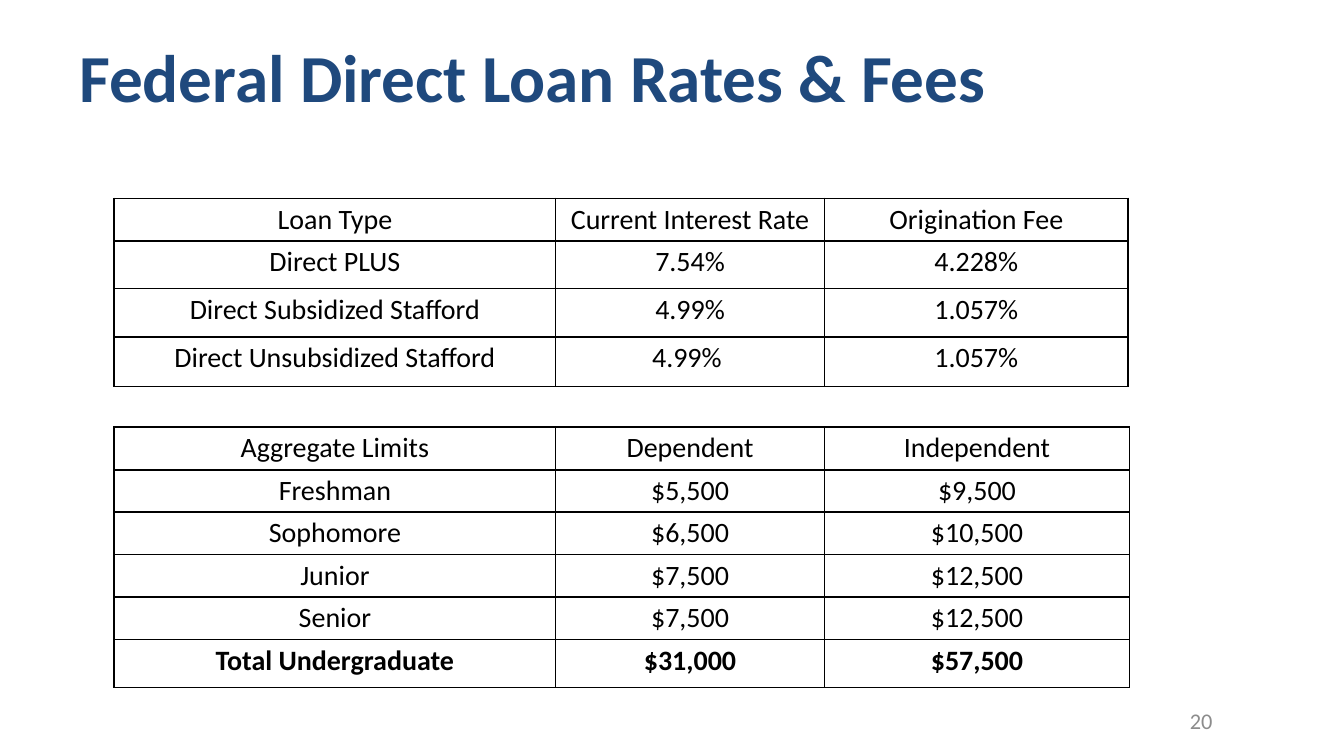
import pptx
import pptx.util
import pptx.dml.color
import pptx.enum.text
import pptx.oxml.ns
import lxml.etree

BLACK = pptx.dml.color.RGBColor(0x00, 0x00, 0x00)
NAVY = pptx.dml.color.RGBColor(0x1F, 0x49, 0x7D)
GRAY = pptx.dml.color.RGBColor(0x8C, 0x8C, 0x8C)
FONT = "Calibri"
WIDTH = pptx.util.Inches(10)
HEIGHT = WIDTH * 9 // 16
ALIGN = pptx.enum.text.PP_ALIGN
MIDDLE = pptx.enum.text.MSO_ANCHOR.MIDDLE

LEFT = 8.5
RATES = [
    ["Loan Type", "Current Interest Rate", "Origination Fee"],
    ["Direct PLUS", "7.54%", "4.228%"],
    ["Direct Subsidized Stafford", "4.99%", "1.057%"],
    ["Direct Unsubsidized Stafford", "4.99% ", "1.057%"],
]
LIMITS = [
    ["Aggregate Limits", "Dependent", "Independent"],
    ["Freshman", "$5,500", "$9,500"],
    ["Sophomore", "$6,500", "$10,500"],
    ["Junior", "$7,500", "$12,500"],
    ["Senior", "$7,500", "$12,500"],
    ["Total Undergraduate", "$31,000", "$57,500"],
]


def across(share):
    return int(WIDTH * share / 100)


def down(share):
    return int(HEIGHT * share / 100)


def write(frame, text, size, color, align, bold=False):
    frame.text = text
    line = frame.paragraphs[0]
    line.alignment = align
    for run in line.runs:
        font = run.font
        font.name = FONT
        font.size = pptx.util.Pt(size)
        font.bold = bold
        font.color.rgb = color


def border(cell):
    qn = pptx.oxml.ns.qn
    props = cell._tc.get_or_add_tcPr()
    for side in ("lnL", "lnR", "lnT", "lnB"):
        edge = lxml.etree.SubElement(props, qn("a:" + side), w=str(pptx.util.Pt(1)))
        fill = lxml.etree.SubElement(edge, qn("a:solidFill"))
        lxml.etree.SubElement(fill, qn("a:srgbClr"), val=str(BLACK))


def add_grid(slide, rows, top, cols, heights, total=False):
    frame = slide.shapes.add_table(
        len(rows), len(cols), across(LEFT), down(top),
        across(sum(cols)), down(sum(heights)))
    table = frame.table
    table.first_row = False
    table.horz_banding = False
    for col, share in zip(table.columns, cols):
        col.width = across(share)
    for row, share in zip(table.rows, heights):
        row.height = down(share)
    for r, texts in enumerate(rows):
        bold = total and r == len(rows) - 1
        for c, text in enumerate(texts):
            cell = table.cell(r, c)
            cell.margin_left = cell.margin_right = pptx.util.Inches(0.06)
            cell.margin_top = cell.margin_bottom = pptx.util.Inches(0.03)
            border(cell)
            cell.fill.background()
            write(cell.text_frame, text, 15, BLACK, ALIGN.CENTER, bold)


def add_title(slide, text):
    title = slide.shapes.title
    title.left, title.top = across(4.9), down(2.5)
    title.width, title.height = across(90.2), down(15)
    frame = title.text_frame
    frame.auto_size = pptx.enum.text.MSO_AUTO_SIZE.NONE
    frame.vertical_anchor = MIDDLE
    write(frame, text, 36, NAVY, ALIGN.LEFT, True)


def add_number(slide, text):
    box = slide.shapes.add_textbox(across(71.7), down(92.7), across(19.5), down(5.3))
    frame = box.text_frame
    frame.word_wrap = True
    frame.vertical_anchor = MIDDLE
    write(frame, text, 12, GRAY, ALIGN.RIGHT)


def main():
    deck = pptx.Presentation()
    deck.slide_width, deck.slide_height = WIDTH, HEIGHT
    slide = deck.slides.add_slide(deck.slide_layouts[5])
    add_grid(slide, RATES, 26.25, [32.85, 20, 22.6], [5.4, 6.3, 6.4, 6.6])
    add_grid(slide, LIMITS, 56.5, [32.85, 20, 22.7], [5.65] + [5.4] * 4 + [6.35], total=True)
    add_title(slide, "Federal Direct Loan Rates & Fees")
    add_number(slide, "20")
    deck.save("out.pptx")


if __name__ == "__main__":
    main()
